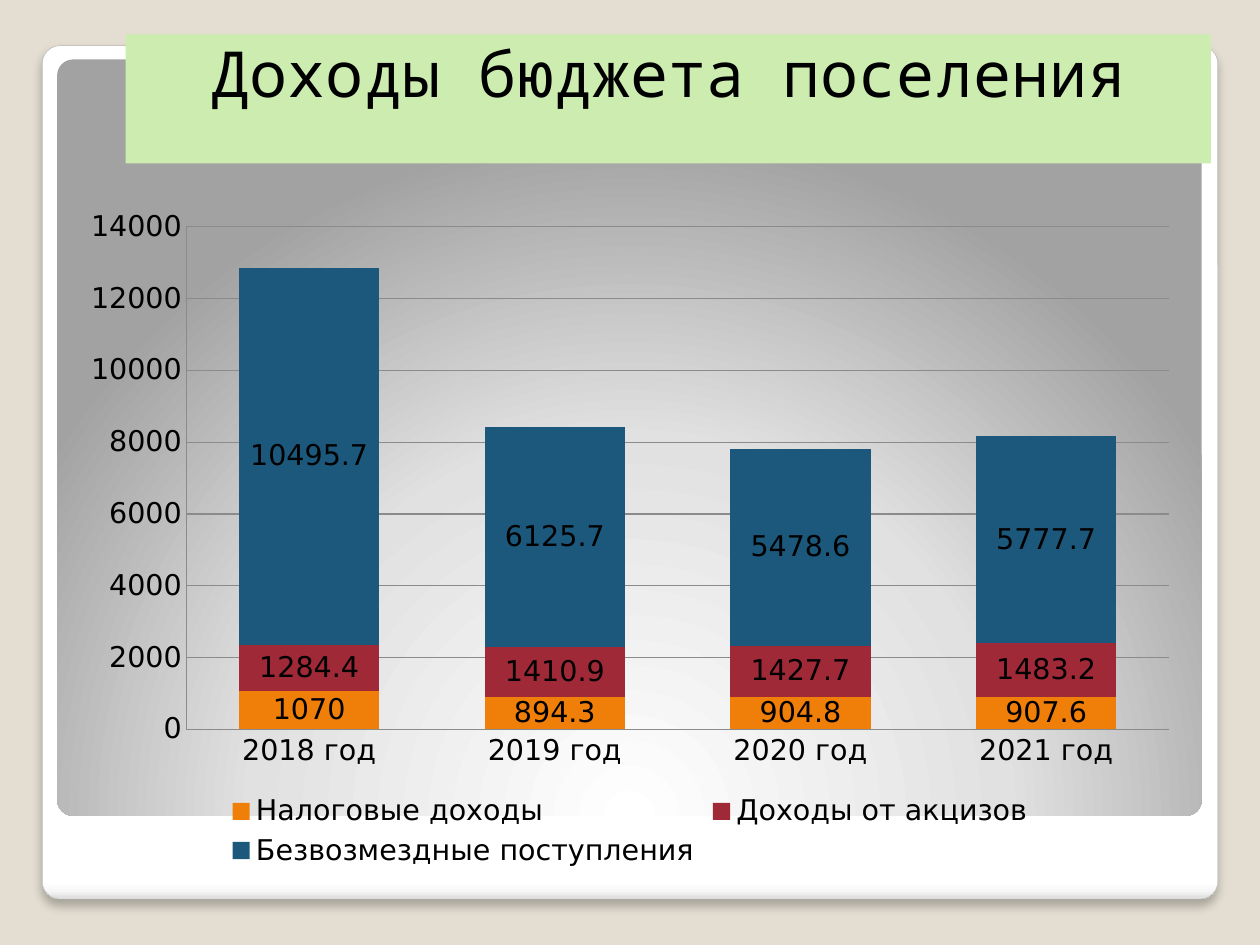
from dataclasses import dataclass

import lxml.etree
import pptx
import pptx.chart.data
import pptx.dml.color
import pptx.enum.chart
import pptx.enum.shapes
import pptx.enum.text
import pptx.oxml
import pptx.oxml.ns
import pptx.util
from pptx.util import Inches

RGBColor = pptx.dml.color.RGBColor
BACKGROUND = RGBColor(0xE3, 0xDE, 0xD1)
BLACK = RGBColor(0x00, 0x00, 0x00)
TITLE_GREEN = RGBColor(0xCC, 0xEC, 0xB0)
EDGE_GREY = RGBColor(0xA4, 0xA4, 0xA4)
GRID_GREY = RGBColor(0x8B, 0x8B, 0x8B)
ORANGE = RGBColor(0xF0, 0x7F, 0x09)
RED = RGBColor(0x9F, 0x29, 0x36)
BLUE = RGBColor(0x1B, 0x58, 0x7C)
DRAWING_NS = 'xmlns:a="http://schemas.openxmlformats.org/drawingml/2006/main"'

LINEAR_DOWN = '<a:lin ang="5400000" scaled="0"/>'
CIRCLE_FROM_BELOW = ('<a:path path="circle"><a:fillToRect l="50000" t="175000" '
                     'r="50000" b="-75000"/></a:path>')
SOFT_SHADOW = (f'<a:effectLst {DRAWING_NS}><a:outerShdw blurRad="76200" dist="50800" '
               'dir="5400000" algn="t" rotWithShape="0"><a:srgbClr val="000000">'
               '<a:alpha val="25000"/></a:srgbClr></a:outerShdw></a:effectLst>')


@dataclass
class Panel:
    left: float
    top: float
    width: float
    height: float
    stops: list[tuple[int, str]]
    direction: str
    framed: bool


@dataclass
class Income:
    name: str
    values: list[float]
    color: RGBColor


PANELS = [
    Panel(0.37, 0.4, 10.29, 7.47,
          [(0, "FFFFFF"), (98, "FFFFFF"), (99, "F7F7F7"), (100, "DADADA")],
          LINEAR_DOWN, True),
    Panel(0.5, 0.52, 10.02, 6.62,
          [(0, "FFFFFF"), (55, "E1E1E1"), (100, "A2A2A2")],
          CIRCLE_FROM_BELOW, False),
]
YEARS = [f"{year} год" for year in range(2018, 2022)]
INCOMES = [
    Income("Налоговые доходы", [1070, 894.3, 904.8, 907.6], ORANGE),
    Income("Доходы от акцизов", [1284.4, 1410.9, 1427.7, 1483.2], RED),
    Income("Безвозмездные поступления", [10495.7, 6125.7, 5478.6, 5777.7], BLUE),
]


def format_font(font: pptx.text.text.Font, *, size: float, name: str,
                color: RGBColor = BLACK) -> None:
    font.size = pptx.util.Pt(size)
    font.name = name
    font.bold = False
    font.color.rgb = color


def write_text(frame: pptx.text.text.TextFrame, text: str, *, size: float, name: str,
               align: pptx.enum.text.PP_ALIGN) -> None:
    para = frame.paragraphs[0]
    para.alignment = align
    span = para.add_run()
    span.text = text
    format_font(span.font, size=size, name=name)


def draw_panel(page: pptx.slide.Slide, panel: Panel) -> None:
    box = page.shapes.add_shape(
        pptx.enum.shapes.MSO_SHAPE.ROUNDED_RECTANGLE, Inches(panel.left),
        Inches(panel.top), Inches(panel.width), Inches(panel.height))
    box.adjustments[0] = 0.021
    stops = "".join(f'<a:gs pos="{place * 1000}"><a:srgbClr val="{color}"/></a:gs>'
                    for place, color in panel.stops)
    gradient = pptx.oxml.parse_xml(
        f'<a:gradFill {DRAWING_NS} rotWithShape="1"><a:gsLst>{stops}</a:gsLst>'
        f'{panel.direction}</a:gradFill>')
    properties = box.element.spPr
    properties.find(pptx.oxml.ns.qn("a:prstGeom")).addnext(gradient)
    if panel.framed:
        box.line.color.rgb = EDGE_GREY
        box.line.width = pptx.util.Pt(0.16)
        properties.append(pptx.oxml.parse_xml(SOFT_SHADOW))
    else:
        box.line.fill.background()
        box.shadow.inherit = False


def draw_title(page: pptx.slide.Slide, text: str) -> None:
    title = page.shapes.title
    title.left, title.top = Inches(1.1), Inches(0.3)
    title.width, title.height = Inches(9.5), Inches(1.13)
    title.fill.solid()
    title.fill.fore_color.rgb = TITLE_GREEN
    frame = title.text_frame
    frame.word_wrap = True
    frame.auto_size = pptx.enum.text.MSO_AUTO_SIZE.NONE
    frame.vertical_anchor = pptx.enum.text.MSO_ANCHOR.TOP
    frame.margin_left = frame.margin_right = frame.margin_top = frame.margin_bottom = 0
    write_text(frame, text, size=40, name="Noto Sans Mono",
               align=pptx.enum.text.PP_ALIGN.CENTER)
    # Bring the title in front of the panels
    title.element.getparent().append(title.element)


def draw_chart(page: pptx.slide.Slide, incomes: list[Income]) -> None:
    data = pptx.chart.data.CategoryChartData()
    data.categories = YEARS
    for income in incomes:
        data.add_series(income.name, income.values)
    chart = page.shapes.add_chart(
        pptx.enum.chart.XL_CHART_TYPE.COLUMN_STACKED, Inches(0.6), Inches(1.72),
        Inches(9.83), Inches(5.92), data).chart
    format_font(chart.font, size=18, name="DejaVu Sans")
    chart.has_title = False
    chart.has_legend = True
    chart.legend.position = pptx.enum.chart.XL_LEGEND_POSITION.BOTTOM
    chart.legend.include_in_layout = False

    # Axes and grid
    for axis in (chart.category_axis, chart.value_axis):
        axis.major_tick_mark = axis.minor_tick_mark = pptx.enum.chart.XL_TICK_MARK.NONE
        axis.format.line.color.rgb = GRID_GREY
    scale = chart.value_axis
    scale.minimum_scale, scale.maximum_scale, scale.major_unit = 0, 14000, 2000
    scale.has_major_gridlines = True
    scale.major_gridlines.format.line.color.rgb = GRID_GREY

    # Stacked columns with their values
    plot = chart.plots[0]
    plot.gap_width, plot.overlap = 75, 100
    plot.vary_by_categories = False
    for series, income in zip(plot.series, incomes):
        series.format.fill.solid()
        series.format.fill.fore_color.rgb = income.color
        series.data_labels.show_value = True
        format_font(series.data_labels.font, size=18, name="DejaVu Sans")


def main() -> None:
    deck = pptx.Presentation()
    deck.slide_width, deck.slide_height = Inches(11.03), Inches(8.27)
    page = deck.slides.add_slide(deck.slide_layouts.get_by_name("Title Only"))
    page.background.fill.solid()
    page.background.fill.fore_color.rgb = BACKGROUND
    for panel in PANELS:
        draw_panel(page, panel)
    draw_title(page, "Доходы бюджета поселения")
    draw_chart(page, INCOMES)
    deck.save("out.pptx")


if __name__ == "__main__":
    main()
